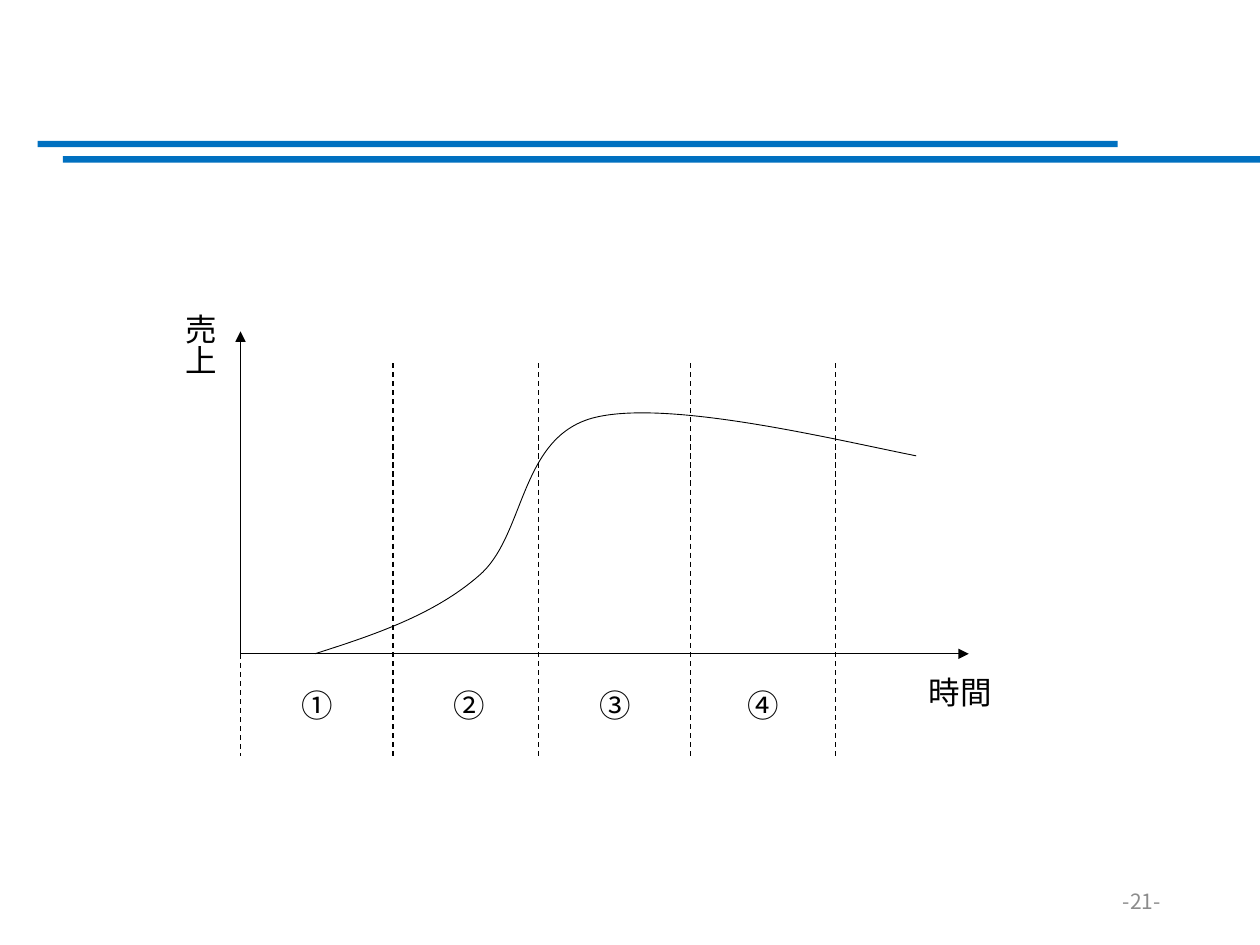
"""Build a product life cycle slide: sales over time in four stages."""
from typing import NamedTuple

import pptx
import pptx.dml.color
import pptx.enum.dml
import pptx.enum.shapes
import pptx.enum.text
import pptx.oxml.ns
import pptx.oxml.xmlchemy
import pptx.util

Cm = pptx.util.Cm
Pt = pptx.util.Pt
ALIGN = pptx.enum.text.PP_ALIGN
OxmlElement = pptx.oxml.xmlchemy.OxmlElement
qn = pptx.oxml.ns.qn

FONT = "Noto Sans CJK JP"
BLACK, BLUE, GREY = "000000", "0070C0", "8C8C8C"
AXIS_X, AXIS_Y = 4.85, 13.18
STAGE_TOP, STAGE_BOTTOM = 7.32, 15.24


class Bar(NamedTuple):
    left: float
    top: float
    width: float
    height: float = 0.13


class Line(NamedTuple):
    x1: float
    y1: float
    x2: float
    y2: float
    dashed: bool = False


class Label(NamedTuple):
    text: str
    left: float
    top: float
    width: float
    height: float = 1.02
    align: ALIGN = ALIGN.LEFT
    size: int = 18
    color: str = BLACK
    vertical: bool = False
    middle: bool = False


class Bezier(NamedTuple):
    control1: tuple[float, float]
    control2: tuple[float, float]
    end: tuple[float, float]


BARS = [Bar(0.76, 2.84, 21.77), Bar(1.27, 3.15, 24.13)]
AXES = [Line(AXIS_X, AXIS_Y, AXIS_X, 6.68), Line(AXIS_X, AXIS_Y, 19.53, AXIS_Y)]
BOUNDARIES = [Line(AXIS_X, AXIS_Y, AXIS_X, STAGE_BOTTOM, True)] + [
    Line(x, STAGE_TOP, x, STAGE_BOTTOM, True) for x in (7.92, 10.85, 13.92, 16.84)
]
STAGES = [
    Label(text, left, 13.7, 1.6, align=ALIGN.CENTER)
    for text, left in zip("①②③④", (5.59, 8.66, 11.61, 14.58))
]
AXIS_NAMES = [
    Label("売上", 3.28, 6.07, 1.27, 3.4, vertical=True),
    Label("時間", 18.47, 13.44, 2.72),
]
PAGE_NUMBER = Label("-21-", 17.93, 17.65, 5.72, align=ALIGN.RIGHT,
                    size=12, color=GREY, middle=True)
SALES_START = (6.35, AXIS_Y)
SALES_CURVE = [
    Bezier((7.54, 12.8), (8.74, 12.4), (9.65, 11.61)),
    Bezier((10.59, 10.82), (10.46, 8.84), (11.94, 8.43)),
    Bezier((13.41, 8.03), (16.81, 8.86), (18.47, 9.19)),
]


def rgb(value: str) -> pptx.dml.color.RGBColor:
    """Turn a hex string into a colour."""
    return pptx.dml.color.RGBColor.from_string(value)


def add_bar(s, bar: Bar) -> None:
    """Draw a header bar."""
    sp = s.shapes.add_shape(pptx.enum.shapes.MSO_SHAPE.RECTANGLE, *map(Cm, bar))
    sp.shadow.inherit = False
    sp.fill.solid()
    sp.fill.fore_color.rgb = rgb(BLUE)
    sp.line.fill.background()


def add_line(s, line: Line) -> None:
    """Draw a dashed stage boundary or an axis with an arrowhead."""
    sp = s.shapes.add_connector(
        pptx.enum.shapes.MSO_CONNECTOR.STRAIGHT, *map(Cm, line[:4]))
    sp.line.color.rgb = rgb(BLACK)
    sp.line.width = Pt(0.75 if line.dashed else 0.5)
    if line.dashed:
        sp.line.dash_style = pptx.enum.dml.MSO_LINE.DASH
    else:
        tail = OxmlElement("a:tailEnd")
        tail.set("type", "triangle")
        sp._element.spPr.find(qn("a:ln")).append(tail)
    sp._element.spPr.append(OxmlElement("a:effectLst"))


def add_label(s, label: Label) -> None:
    """Draw a text box with one run."""
    sp = s.shapes.add_textbox(*map(Cm, label[1:5]))
    tf = sp.text_frame
    tf.word_wrap = True
    if label.middle:
        tf.vertical_anchor = pptx.enum.text.MSO_ANCHOR.MIDDLE
    else:
        tf.auto_size = pptx.enum.text.MSO_AUTO_SIZE.SHAPE_TO_FIT_TEXT
    if label.vertical:
        sp._element.txBody.bodyPr.set("vert", "eaVert")
    p = tf.paragraphs[0]
    p.alignment = label.align
    r = p.add_run()
    r.text = label.text
    r.font.size = Pt(label.size)
    r.font.color.rgb = rgb(label.color)
    r.font.name = FONT
    ea = OxmlElement("a:ea")
    ea.set("typeface", FONT)
    r._r.get_or_add_rPr().append(ea)


def add_curve(s, start: tuple[float, float], pieces: list[Bezier]) -> None:
    """Draw an open freeform and bend its segments into cubic curves."""
    builder = s.shapes.build_freeform(*map(Cm, start))
    builder.add_line_segments([tuple(map(Cm, b.end)) for b in pieces], close=False)
    sp = builder.convert_to_shape()
    segments = list(sp._element.iter(qn("a:lnTo")))
    for segment, piece in zip(segments, pieces):
        cubic = OxmlElement("a:cubicBezTo")
        for x, y in piece:
            pt = OxmlElement("a:pt")
            pt.set("x", str(Cm(x) - sp.left))
            pt.set("y", str(Cm(y) - sp.top))
            cubic.append(pt)
        segment.getparent().replace(segment, cubic)
    sp.shadow.inherit = False
    sp.fill.background()
    sp.line.color.rgb = rgb(BLACK)
    sp.line.width = Pt(0.5)


def main() -> None:
    """Build and save the slide."""
    prs = pptx.Presentation()
    prs.slide_width, prs.slide_height = Cm(25.4), Cm(19.05)
    s = prs.slides.add_slide(prs.slide_layouts[6])
    for bar in BARS:
        add_bar(s, bar)
    add_label(s, PAGE_NUMBER)
    add_curve(s, SALES_START, SALES_CURVE)
    for line in AXES + BOUNDARIES:
        add_line(s, line)
    for label in STAGES + AXIS_NAMES:
        add_label(s, label)
    prs.save("out.pptx")


if __name__ == "__main__":
    main()
